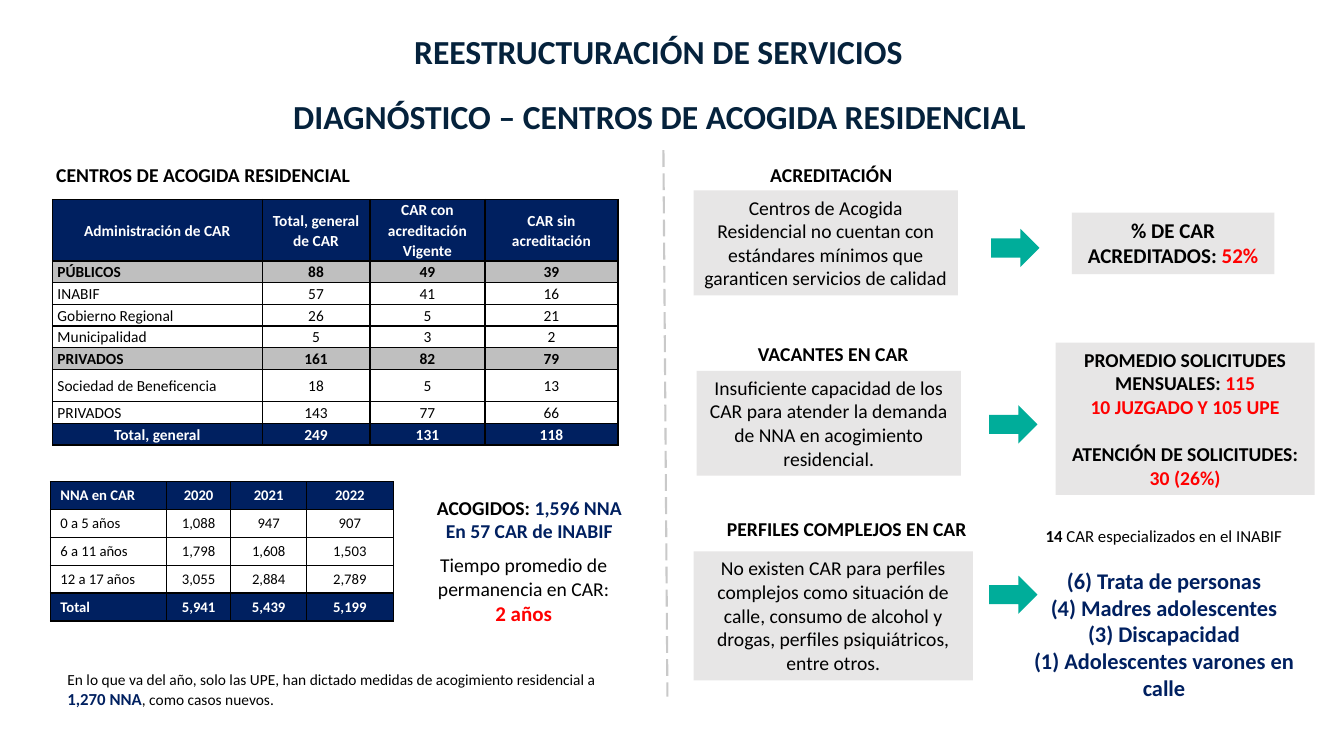
from pptx import Presentation, util as u
from pptx.dml.color import RGBColor
from pptx.enum import dml, shapes, text
from pptx.oxml.ns import qn
from lxml import etree

NAVY, INK, RED, TEAL = "002060", "05223C", "FF0000", "00AD9A"
BLACK, WHITE, GREY, PALE, DASH = "000000", "FFFFFF", "BFBFBF", "E7E6E6", "C9C9C9"
LEFT, MID = text.PP_ALIGN.LEFT, text.PP_ALIGN.CENTER
TOP, HALF = text.MSO_ANCHOR.TOP, text.MSO_ANCHOR.MIDDLE
CELL = u.Inches(0.1)  # one column or row of the grid


def tint(code):
    return RGBColor.from_string(code)


def grid(*cells):
    return [u.Emu(round(n * CELL)) for n in cells]


def run(words, size=14, color=BLACK, bold=False):
    return words, size, color, bold


class Page:
    font = "Calibri"

    def __init__(self, deck):
        self.slide = deck.slides.add_slide(deck.slide_layouts[1])
        self.shapes = self.slide.shapes

    def word(self, frame, lines, align=MID, anchor=TOP, lead=1.0, gaps={}):
        """Each line is a list of runs; gaps maps a line to the space before it."""
        frame.word_wrap = True
        frame.vertical_anchor = anchor
        frame.text = "\n".join(line[0][0] for line in lines)
        for i, (par, line) in enumerate(zip(frame.paragraphs, lines)):
            par.alignment, par.line_spacing = align, lead
            par.space_before = u.Pt(gaps.get(i, 0))
            for words, *_ in line[1:]:
                par.add_run().text = words
            for part, (_, size, color, bold) in zip(par.runs, line):
                part.font.name, part.font.size = self.font, u.Pt(size)
                part.font.bold, part.font.color.rgb = bold, tint(color)

    def fill(self, index, at, lines, **style):
        """Move and format a template placeholder."""
        box = self.slide.placeholders[index]
        box.left, box.top, box.width, box.height = grid(*at)
        box.text_frame.auto_size = text.MSO_AUTO_SIZE.NONE
        self.word(box.text_frame, lines, **style)
        for par in box.text_frame.paragraphs:
            props = par._p.get_or_add_pPr()
            props.set("marL", "0")
            props.set("indent", "0")
            etree.SubElement(props, qn("a:buNone"))

    def label(self, at, lines, **style):
        self.word(self.shapes.add_textbox(*grid(*at)).text_frame, lines, **style)

    def shape(self, kind, at, color):
        item = self.shapes.add_shape(kind, *grid(*at))
        item.shadow.inherit = False
        item.fill.solid()
        item.fill.fore_color.rgb = tint(color)
        item.line.fill.background()
        return item

    def panel(self, at, lines, **style):
        item = self.shape(shapes.MSO_SHAPE.RECTANGLE, at, PALE)
        self.word(item.text_frame, lines, **style)

    def arrow(self, left, top):
        self.shape(shapes.MSO_SHAPE.RIGHT_ARROW, (left, top, 4.8, 3.8), TEAL)

    def rule(self, *ends):
        line = self.shapes.add_connector(shapes.MSO_CONNECTOR.STRAIGHT, *grid(*ends))
        line.line.color.rgb, line.line.width = tint(DASH), u.Pt(1.5)
        line.line.dash_style = dml.MSO_LINE.LONG_DASH
        etree.SubElement(line._element.spPr, qn("a:effectLst"))

    def edge(self, cell):
        props = cell._tc.get_or_add_tcPr()
        for side in ("lnL", "lnR", "lnT", "lnB"):
            line = etree.SubElement(props, qn("a:" + side), w="12700")
            paint = etree.SubElement(line, qn("a:solidFill"))
            etree.SubElement(paint, qn("a:srgbClr"), val=BLACK)

    def table(self, at, cols, rows, data, size, pad, lead, grey=(), mids=()):
        """First and last rows are navy, grey rows are subtotals;
        mids are the rows whose first cell is centred."""
        table = self.shapes.add_table(len(rows), len(cols),
                                      *grid(*at, sum(cols), sum(rows))).table
        table.first_row = table.horz_banding = False
        for col, width in zip(table.columns, grid(*cols)):
            col.width = width
        for row, height in zip(table.rows, grid(*rows)):
            row.height = height
        for r, values in enumerate(data):
            navy = r in (0, len(data) - 1)
            back = NAVY if navy else GREY if r in grey else WHITE
            ink = WHITE if navy else BLACK
            for c, value in enumerate(values):
                cell = table.cell(r, c)
                side, end = grid(*pad)
                cell.margin_left = cell.margin_right = side
                cell.margin_top = cell.margin_bottom = end
                self.edge(cell)
                cell.fill.solid()
                cell.fill.fore_color.rgb = tint(back)
                self.word(cell.text_frame, [[run(value, size, ink, navy or r in grey)]],
                          align=MID if c or r in mids else LEFT, lead=lead)
                cell.vertical_anchor = HALF


def main():
    deck = Presentation()
    deck.slide_width, deck.slide_height = u.Inches(13.33), u.Inches(7.5)
    page = Page(deck)

    # Headings
    page.fill(0, (23.3, 0.8, 84, 9.1),
              [[run("REESTRUCTURACIÓN DE SERVICIOS", 24, INK, True)]],
              anchor=HALF, lead=0.9)
    page.label((25.5, 9, 79.8, 5.6),
               [[run("DIAGNÓSTICO – CENTROS DE ACOGIDA RESIDENCIAL", 24, INK, True)]],
               anchor=HALF, lead=0.9)
    page.rule(65.8, 14.9, 66.2, 69.1)

    # Centres by administration
    page.label((4.6, 15.7, 38, 3.4),
               [[run("CENTROS DE ACOGIDA RESIDENCIAL", bold=True)]], align=LEFT)
    page.table((5.2, 19.8), (20.8, 10.7, 11.4, 13.2),
               [6.1] + [2.15] * 5 + [3.2] + [2.15] * 2, [
        ("Administración de CAR", "Total, general de CAR",
         "CAR con acreditación Vigente", "CAR sin acreditación"),
        ("PÚBLICOS", "88", "49", "39"),
        ("INABIF", "57", "41", "16"),
        ("Gobierno Regional", "26", "5", "21"),
        ("Municipalidad", "5", "3", "2"),
        ("PRIVADOS", "161", "82", "79"),
        ("Sociedad de Beneficencia", "18", "5", "13"),
        ("PRIVADOS", "143", "77", "66"),
        ("Total, general", "249", "131", "118"),
    ], size=11, pad=(0.5, 0), lead=1.07, grey=(1, 5), mids=(0, 8))

    # Children by age
    page.table((5, 47.8), (11.5, 6.4, 7.5, 8.6), [2.76] * 5, [
        ("NNA en CAR", "2020", "2021", "2022"),
        ("0 a 5 años", "1,088", "947", "907"),
        ("6 a 11 años", "1,798", "1,608", "1,503"),
        ("12 a 17 años", "3,055", "2,884", "2,789"),
        ("Total", "5,941", "5,439", "5,199"),
    ], size=10.5, pad=(1, 0.45), lead=1.0)

    # Key figures
    page.label((41.9, 48.7, 21.2, 5.7), [
        [run("ACOGIDOS: ", bold=True), run("1,596 NNA", color=NAVY, bold=True)],
        [run("En 57 CAR de INABIF", color=NAVY, bold=True)]])
    page.label((39.3, 54.4, 25.3, 8.2), [
        [run("Tiempo promedio de permanencia en CAR:")],
        [run("2 años", 15, RED, True)]])
    page.label((5.7, 66, 57.5, 4.9), [[
        run("En lo que va del año, solo las UPE, han dictado medidas de "
            "acogimiento residencial a ", 11),
        run("1,270 NNA", 12, NAVY, True), run(", como casos nuevos.", 11)]], align=LEFT)

    # Problems: heading, panel and arrow
    for head, spot, words, at, tip in (
        ("ACREDITACIÓN", (73.9, 15.7, 17.1, 3.4),
         "Centros de Acogida Residencial no cuentan con estándares mínimos que "
         "garanticen servicios de calidad", (68.8, 18.9, 26.2, 10.4), (98.3, 22.7)),
        ("VACANTES EN CAR", (65.5, 33.4, 34.3, 3.4),
         "Insuficiente capacidad de los CAR para atender la demanda de NNA en "
         "acogimiento residencial.", (69.1, 36.8, 26.2, 10.4), (98.1, 40.2)),
        ("PERFILES COMPLEJOS EN CAR", (67.6, 50.8, 32.8, 3.4),
         "No existen CAR para perfiles complejos como situación de calle, consumo de "
         "alcohol y drogas, perfiles psiquiátricos, entre otros.",
         (68.8, 54.7, 27.7, 12.8), (98.1, 57.1)),
    ):
        page.label(spot, [[run(head, bold=True)]])
        page.panel(at, [[run(words)]])
        page.arrow(*tip)

    # Results
    page.panel((106.3, 21.1, 20.1, 6.1), [
        [run("% DE CAR ACREDITADOS: ", 15, BLACK, True), run("52%", 15, RED, True)]])
    page.panel((104.7, 34, 25.7, 15.1), [
        [run("PROMEDIO SOLICITUDES MENSUALES: ", bold=True), run("115", 14, RED, True)],
        [run("10 JUZGADO Y 105 UPE", 14, RED, True)],
        [run("ATENCIÓN DE SOLICITUDES: ", bold=True), run("30 (26%)", 14, RED, True)],
    ], gaps={2: 17})
    kinds = ("(6) Trata de personas", "(4) Madres adolescentes",
             "(3) Discapacidad", "(1) Adolescentes varones en calle")
    page.fill(1, (101.3, 51.7, 28.3, 19.2),
              [[run("14", 12, bold=True), run(" CAR especializados en el INABIF", 12)]]
              + [[run(kind, 16, NAVY, True)] for kind in kinds], gaps={1: 14.6})

    deck.save("out.pptx")


if __name__ == "__main__":
    main()
